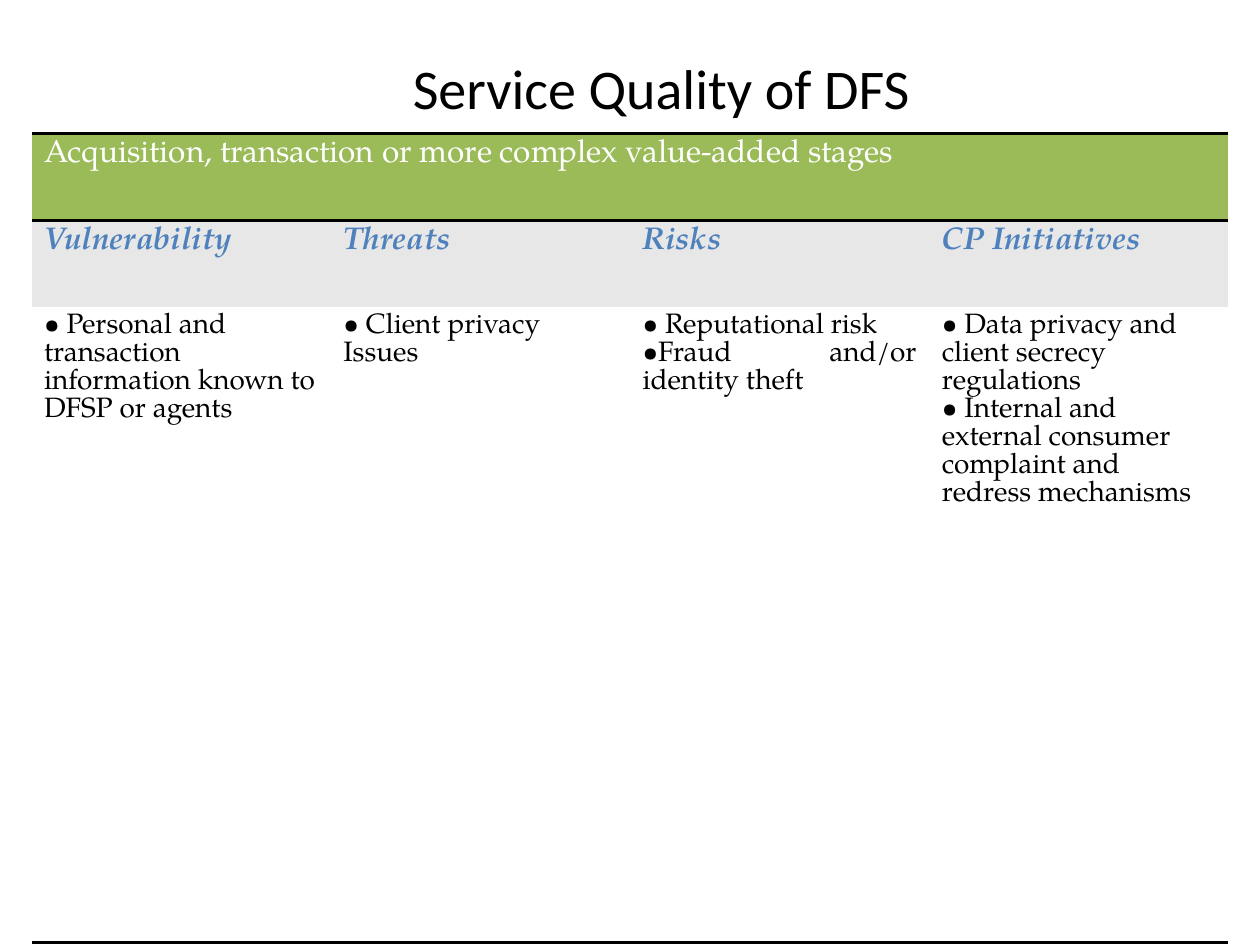
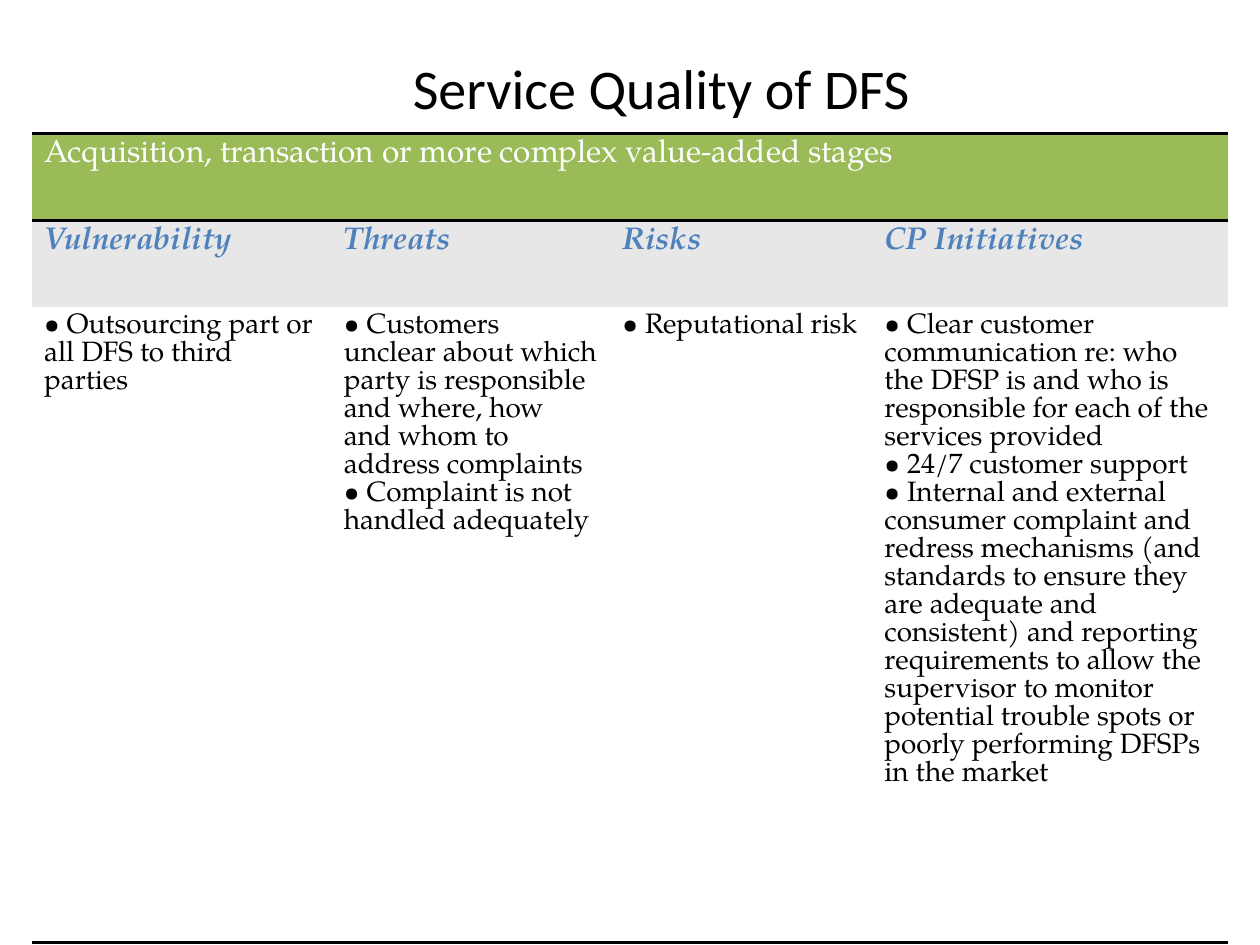
"""Build two slides on the service quality of digital financial services."""
from lxml import etree
from pptx import Presentation
from pptx import util as u
from pptx.dml.color import RGBColor
from pptx.enum import text
from pptx.oxml.ns import qn

COLORS = {"band": "9BBB59", "heading": "4F81BD", "grey": "E7E7E7",
          "white": "FFFFFF", "black": "000000"}
SERIF = "TeX Gyre Pagella"
LEFT, JUSTIFY = text.PP_ALIGN.LEFT, text.PP_ALIGN.JUSTIFY
BAND = "Acquisition, transaction or more complex value-added stages"
HEADINGS = ["Vulnerability", "Threats", "Risks", "CP Initiatives"]
ROW_HEIGHTS = [0.69, 0.69, 5.04]
ROW_STYLES = [
    {"fill": "band", "color": "white", "ruled": "TB",
     "font": {"size": u.Pt(18), "bold": False, "italic": False}},
    {"fill": "grey", "color": "heading", "ruled": "T",
     "font": {"size": u.Pt(18), "bold": True, "italic": True}},
    {"fill": "white", "color": "black", "ruled": "B",
     "font": {"size": u.Pt(16), "bold": False, "italic": False}},
]
STAGES = [
    {"widths": [2.375] * 4,
     "points": [
         ["• Personal and transaction information known to DFSP or agents"],
         ["• Client privacy Issues"],
         ["• Reputational risk", "•Fraud and/or identity theft"],
         ["• Data privacy and client secrecy regulations",
          "• Internal and external consumer complaint and redress mechanisms"]]},
    {"widths": [2.38, 2.21, 2.08, 2.83],
     "points": [
         ["• Outsourcing part or all DFS to third parties"],
         ["• Customers unclear about which party is responsible and where, "
          "how and whom to address complaints",
          "• Complaint is not handled adequately"],
         ["• Reputational risk"],
         ["• Clear customer communication re: who the DFSP is and who is "
          "responsible for each of the services provided",
          "• 24/7 customer support",
          "• Internal and external consumer complaint and redress mechanisms "
          "(and standards to ensure they are adequate and consistent) and "
          "reporting requirements to allow the supervisor to monitor potential "
          "trouble spots or poorly performing DFSPs in the market"]]},
]


def rule_cell(cell, ruled):
    properties = cell._tc.get_or_add_tcPr()
    for position, side in enumerate("LRTB"):
        border = etree.Element(qn(f"a:ln{side}"), w=str(u.Pt(2)))
        if side in ruled:
            fill = etree.SubElement(border, qn("a:solidFill"))
            etree.SubElement(fill, qn("a:srgbClr"), val=COLORS["black"])
        else:
            etree.SubElement(border, qn("a:noFill"))
        properties.insert(position, border)


def write_cell(cell, lines, style, alignment):
    cell.fill.solid()
    cell.fill.fore_color.rgb = RGBColor.from_string(COLORS[style["fill"]])
    rule_cell(cell, style["ruled"])
    cell.text_frame.text = "\n".join(lines)
    for paragraph in cell.text_frame.paragraphs:
        paragraph.alignment = alignment
        paragraph.line_spacing = style["font"]["size"]
        for run in paragraph.runs:
            run.font.name = SERIF
            run.font.color.rgb = RGBColor.from_string(COLORS[style["color"]])
            for name, value in style["font"].items():
                setattr(run.font, name, value)


deck = Presentation()
deck.slide_width, deck.slide_height = u.Inches(10), u.Inches(7.5)

for stage in STAGES:
    slide = deck.slides.add_slide(deck.slide_layouts[5])
    title = slide.shapes.title
    for name, value in {"left": 0.5, "top": 0.3, "width": 9, "height": 0.78}.items():
        setattr(title, name, u.Inches(value))
    title.text_frame.text = "\tService Quality of DFS"
    title.text_frame.vertical_anchor = text.MSO_ANCHOR.MIDDLE
    heading = title.text_frame.paragraphs[0]
    heading.alignment = text.PP_ALIGN.CENTER
    for name, value in {"name": "Calibri", "size": u.Pt(32)}.items():
        setattr(heading.runs[0].font, name, value)
    heading.runs[0].font.color.rgb = RGBColor.from_string(COLORS["black"])

    matrix = slide.shapes.add_table(
        3, 4, u.Inches(0.25), u.Inches(1.06), u.Inches(9.5), u.Inches(sum(ROW_HEIGHTS))).table
    matrix.horz_banding = False
    for column, width in zip(matrix.columns, stage["widths"]):
        column.width = u.Inches(width)
    for row, height in zip(matrix.rows, ROW_HEIGHTS):
        row.height = u.Inches(height)

    matrix.cell(0, 0).merge(matrix.cell(0, 3))
    band_style, heading_style, point_style = ROW_STYLES
    write_cell(matrix.cell(0, 0), [BAND], band_style, LEFT)
    for index, (label, points) in enumerate(zip(HEADINGS, stage["points"])):
        if index:
            rule_cell(matrix.cell(0, index), band_style["ruled"])
        write_cell(matrix.cell(1, index), [label], heading_style, JUSTIFY)
        write_cell(matrix.cell(2, index), points, point_style,
                   JUSTIFY if label == "Risks" else LEFT)

deck.save("out.pptx")
